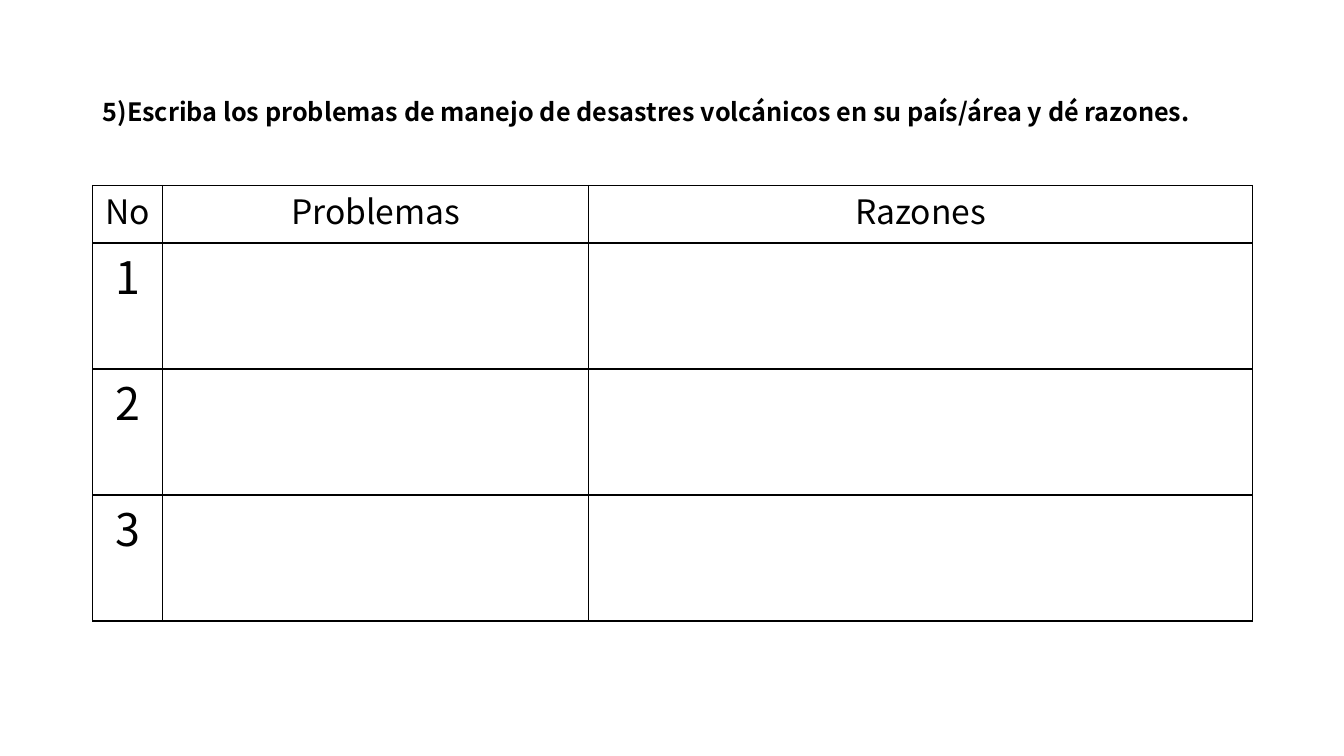
from lxml.etree import SubElement
from pptx import Presentation
from pptx.dml.color import RGBColor
from pptx.enum.text import MSO_ANCHOR, PP_ALIGN
from pptx.oxml.ns import qn
from pptx.util import Inches, Pt

FONT = "Noto Sans CJK JP"
BLACK = "000000"


def write(paragraph, text, size, bold=False):
    run = paragraph.add_run()
    run.text = text
    for attribute, value in {"name": FONT, "size": Pt(size), "bold": bold}.items():
        setattr(run.font, attribute, value)
    run.font.color.rgb = RGBColor.from_string(BLACK)


def add_borders(cell, color, width):
    properties = cell._tc.get_or_add_tcPr()
    for side in ("lnL", "lnR", "lnT", "lnB"):
        line = SubElement(properties, qn(f"a:{side}"), w=str(Pt(width)))
        fill = SubElement(line, qn("a:solidFill"))
        SubElement(fill, qn("a:srgbClr"), val=color)


prs = Presentation()
prs.slide_width = Inches(13.33)
prs.slide_height = Inches(7.5)
slide = prs.slides.add_slide(prs.slide_layouts[6])

# Question
question = slide.shapes.add_textbox(
    Inches(0.92), Inches(0.4), Inches(11.5), Inches(1.45)
).text_frame
question.word_wrap = True
question.vertical_anchor = MSO_ANCHOR.MIDDLE
question.paragraphs[0].line_spacing = 0.9
write(
    question.paragraphs[0],
    "5)Escriba los problemas de manejo de desastres volcánicos en su país/área y dé razones.",
    18,
    bold=True,
)

# Answer table
headings = ["No", "Problemas", "Razones"]
column_widths = [0.69, 4.23, 6.58]
row_heights = [0.57] + [1.25] * 3
answers = slide.shapes.add_table(
    len(row_heights), len(headings),
    Inches(0.92), Inches(1.84), Inches(sum(column_widths)), Inches(sum(row_heights)),
).table
answers.first_row = False
answers.horz_banding = False
for column, width in zip(answers.columns, column_widths):
    column.width = Inches(width)
for row, height in zip(answers.rows, row_heights):
    row.height = Inches(height)

cell_margins = {
    "margin_left": Inches(0.07),
    "margin_right": Inches(0.07),
    "margin_top": 0,
    "margin_bottom": 0,
}
for cell in answers.iter_cells():
    add_borders(cell, BLACK, 1)
    cell.fill.background()
    for attribute, value in cell_margins.items():
        setattr(cell, attribute, value)
    cell.text_frame.paragraphs[0].alignment = PP_ALIGN.CENTER

for index, heading in enumerate(headings):
    write(answers.cell(0, index).text_frame.paragraphs[0], heading, 24)
for number in range(1, len(row_heights)):
    write(answers.cell(number, 0).text_frame.paragraphs[0], str(number), 32)

prs.save("out.pptx")
